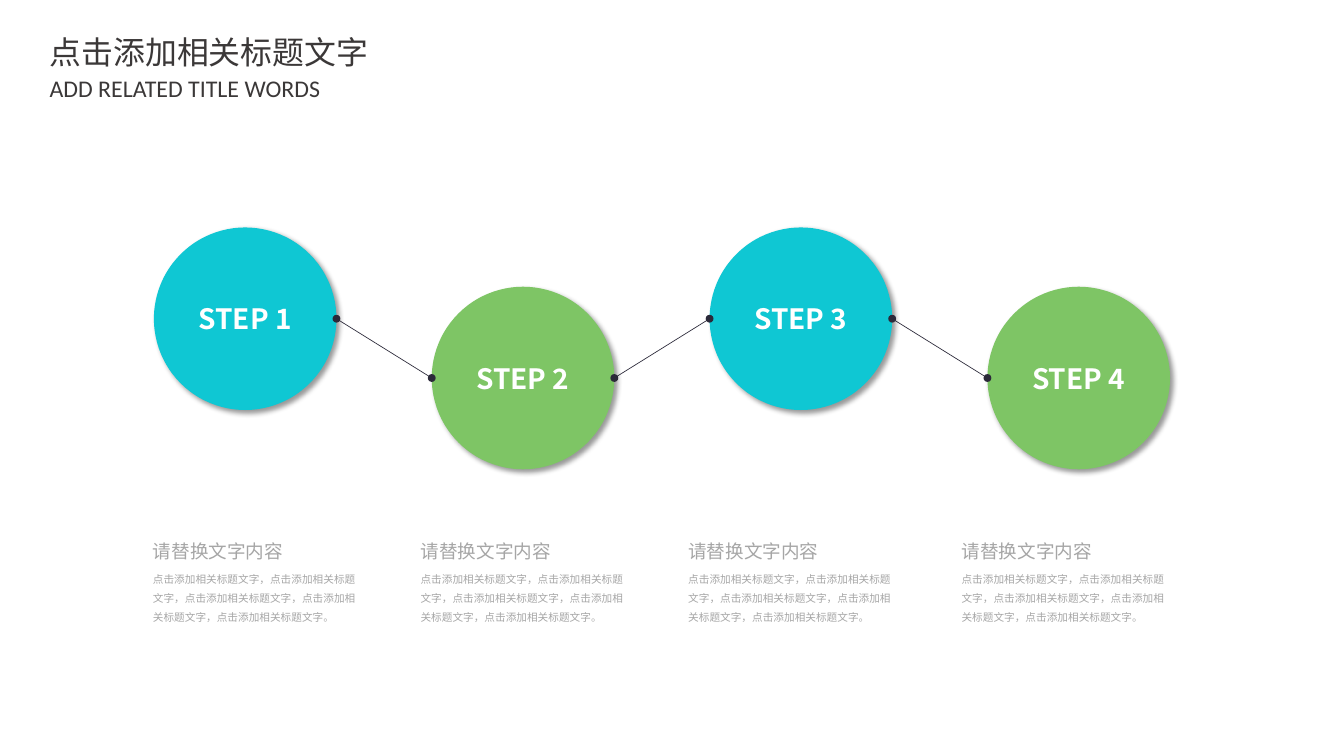
from dataclasses import dataclass

from lxml.etree import SubElement
from pptx import Presentation
from pptx.dml.color import RGBColor
from pptx.enum.shapes import MSO_CONNECTOR, MSO_SHAPE
from pptx.enum.text import MSO_ANCHOR, MSO_AUTO_SIZE, PP_ALIGN
from pptx.oxml import parse_xml
from pptx.oxml.ns import nsdecls, qn
from pptx.util import Inches, Pt


@dataclass(frozen=True)
class Theme:
    teal: str = "0FC7D3"
    green: str = "7EC565"
    link: str = "2B2939"
    heading: str = "3B3838"
    caption: str = "A6A6A6"
    white: str = "FFFFFF"
    cjk_font: str = "Noto Sans CJK SC"
    latin_font: str = "Calibri"
    caption_font: str = "Arial"
    title_size: float = 24
    subtitle_size: float = 18
    step_size: float = 21.1
    caption_size: float = 14
    body_size: float = 8


THEME = Theme()
STEPS = ["STEP 1", "STEP 2", "STEP 3", "STEP 4"]
CAPTION_LEFTS = [1.49, 4.29, 7.09, 9.95]
CAPTION_TITLE = "请替换文字内容"
CAPTION_BODY = "，".join(["点击添加相关标题文字"] * 5) + "。"


def color(value):
    return RGBColor.from_string(value)


def write(shape, text, size, ink, font_name, bold=False,
          align=PP_ALIGN.LEFT, spacing=1.0):
    """Fill a shape with one formatted paragraph."""
    frame = shape.text_frame
    frame.text = text
    paragraph = frame.paragraphs[0]
    paragraph.alignment = align
    paragraph.line_spacing = spacing
    font = paragraph.font
    font.size, font.bold = Pt(size), bold
    font.color.rgb = color(ink)
    font.name = font_name
    properties = paragraph._p.pPr.find(qn("a:defRPr"))
    SubElement(properties, qn("a:ea")).set("typeface", THEME.cjk_font)


def fit_text(shape, wrap):
    frame = shape.text_frame
    frame.word_wrap = wrap
    frame.auto_size = MSO_AUTO_SIZE.SHAPE_TO_FIT_TEXT
    frame.vertical_anchor = MSO_ANCHOR.TOP
    frame.margin_left = frame.margin_right = Inches(0.11)
    frame.margin_top = frame.margin_bottom = Inches(0.05)


def add_text(slide, left, top, width, height, wrap, *text_format, **options):
    box = slide.shapes.add_textbox(
        Inches(left), Inches(top), Inches(width), Inches(height))
    fit_text(box, wrap)
    write(box, *text_format, **options)


def add_header(slide, left, top):
    title = slide.shapes.title
    title.left, title.top = Inches(left), Inches(top)
    title.width, title.height = Inches(3.58), Inches(0.51)
    fit_text(title, False)
    write(title, "点击添加相关标题文字", THEME.title_size,
          THEME.heading, THEME.cjk_font)
    add_text(slide, left, top + 0.43, 3.07, 0.41, False,
             "ADD RELATED TITLE WORDS", THEME.subtitle_size,
             THEME.heading, THEME.latin_font)


def add_step(slide, label, left, top, diameter, fill):
    circle = slide.shapes.add_shape(
        MSO_SHAPE.OVAL, Inches(left), Inches(top),
        Inches(diameter), Inches(diameter))
    circle.fill.solid()
    circle.fill.fore_color.rgb = color(fill)
    circle.line.fill.background()
    circle._element.spPr.append(parse_xml(
        f'<a:effectLst {nsdecls("a")}>'
        f'<a:outerShdw blurRad="{Pt(4)}" dist="{Pt(3)}" dir="2700000" '
        'algn="tl" rotWithShape="0"><a:srgbClr val="000000">'
        '<a:alpha val="40000"/></a:srgbClr></a:outerShdw></a:effectLst>'))
    circle.text_frame.vertical_anchor = MSO_ANCHOR.MIDDLE
    write(circle, label, THEME.step_size, THEME.white, THEME.cjk_font,
          bold=True, align=PP_ALIGN.CENTER)


def add_link(slide, start, end):
    link = slide.shapes.add_connector(
        MSO_CONNECTOR.STRAIGHT, *map(Inches, start + end))
    link.line.color.rgb = color(THEME.link)
    link.line.width = Pt(0.5)
    line = link.line._get_or_add_ln()
    for tag in ("a:headEnd", "a:tailEnd"):
        SubElement(line, qn(tag)).set("type", "oval")
    SubElement(link._element.spPr, qn("a:effectLst"))


def add_step_chain(slide, left, top, width, diameter, drop):
    """Space the circles evenly; every second one sits lower."""
    pitch = (width - diameter) / (len(STEPS) - 1)
    places = [(left + i * pitch, top + i % 2 * drop)
              for i in range(len(STEPS))]
    for i, (label, (x, y)) in enumerate(zip(STEPS, places)):
        fill = THEME.green if i % 2 else THEME.teal
        add_step(slide, label, x, y, diameter, fill)
    radius = diameter / 2
    for (x1, y1), (x2, y2) in zip(places, places[1:]):
        add_link(slide, (x1 + diameter, y1 + radius), (x2, y2 + radius))


def add_caption(slide, left, top):
    add_text(slide, left, top, 2.66, 0.39, True, CAPTION_TITLE,
             THEME.caption_size, THEME.caption, THEME.caption_font,
             spacing=1.2)
    add_text(slide, left, top + 0.33, 2.44, 0.71, True, CAPTION_BODY,
             THEME.body_size, THEME.caption, THEME.cjk_font, spacing=1.5)


def main():
    presentation = Presentation()
    presentation.slide_width = Inches(14.06)
    presentation.slide_height = Inches(7.91)
    slide = presentation.slides.add_slide(presentation.slide_layouts[5])
    slide.background.fill.solid()
    slide.background.fill.fore_color.rgb = color(THEME.white)

    # Title and subtitle
    add_header(slide, 0.41, 0.29)
    # Linked step circles
    add_step_chain(slide, 1.61, 2.38, 10.63, 1.91, 0.62)
    # Captions under the steps
    for left in CAPTION_LEFTS:
        add_caption(slide, left, 5.55)

    presentation.save("out.pptx")


if __name__ == "__main__":
    main()
